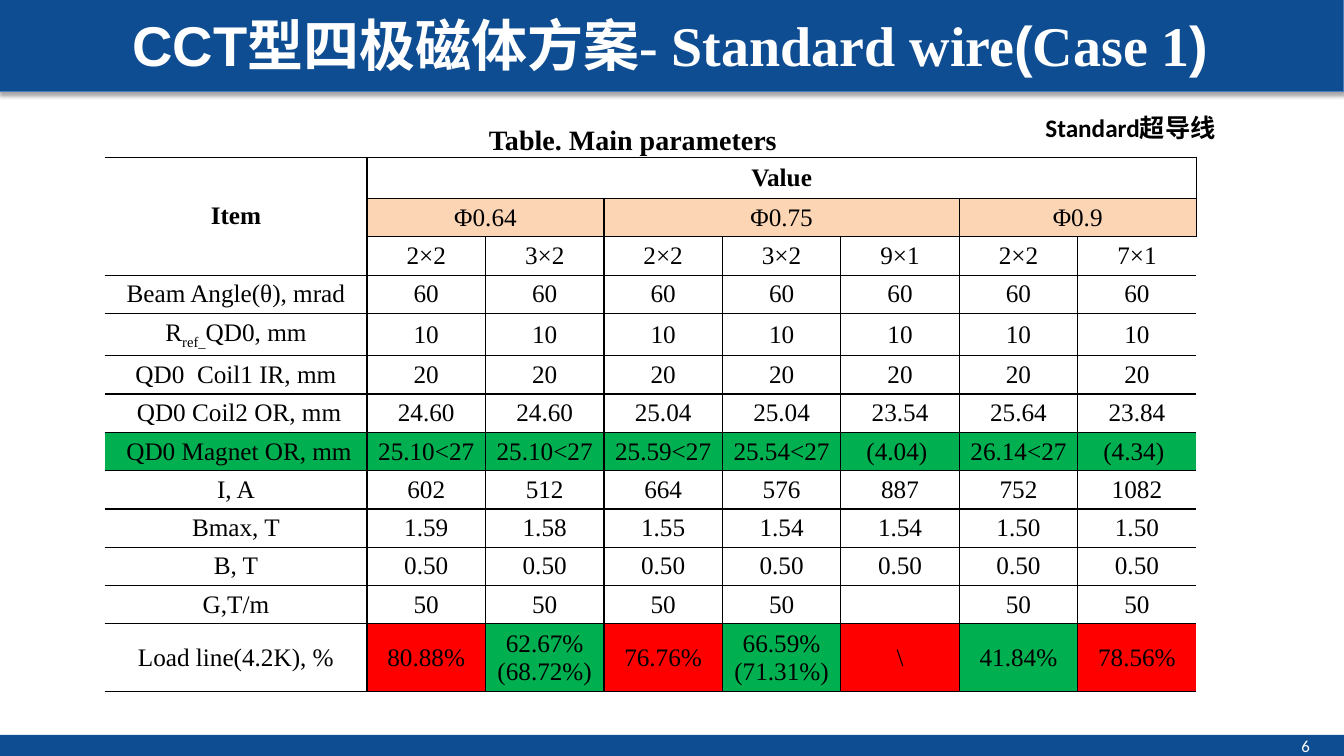
from dataclasses import dataclass

from lxml.etree import SubElement
from pptx import Presentation
from pptx.dml.color import RGBColor
from pptx.enum.shapes import MSO_SHAPE
from pptx.enum.text import MSO_ANCHOR, PP_ALIGN
from pptx.oxml.ns import qn
from pptx.util import Inches, Pt

COLORS = {
    "navy": "0E4D92",
    "edge": "4B7EBC",
    "white": "FFFFFF",
    "black": "000000",
    "peach": "FCD5B5",
    "green": "00B050",
    "red": "FF0000",
}
SERIF = "Times New Roman"
HEADER_ROWS = 3
MAGNET_ROW = 7
LOAD_COLORS = ["red", "green", "red", "green", "red", "green", "red"]
COLUMN_WIDTHS = [2.6] + [1.175] * 7
ROW_HEIGHTS = [0.41, 0.38, 0.38, 0.38, 0.42] + [0.38] * 7 + [0.67]
MERGES = [
    (0, 0, 2, 0), (0, 1, 0, 7),
    (1, 1, 1, 2), (1, 3, 1, 5), (1, 6, 1, 7),
]
PARAMETERS = [
    ["Item", "Value", "", "", "", "", "", ""],
    ["", "Φ0.64", "", "Φ0.75", "", "", "Φ0.9", ""],
    ["", "2×2", "3×2", "2×2", "3×2", "9×1", "2×2", "7×1"],
    ["Beam Angle(θ), mrad"] + ["60"] * 7,
    ["R|ref_|QD0, mm"] + ["10"] * 7,
    ["QD0  Coil1 IR, mm"] + ["20"] * 7,
    [" QD0 Coil2 OR, mm", "24.60", "24.60", "25.04", "25.04", "23.54", "25.64", "23.84"],
    [" QD0 Magnet OR, mm", "25.10<27", "25.10<27", "25.59<27", "25.54<27", "(4.04) ",
     "26.14<27", "(4.34) "],
    ["I, A", "602", "512", "664", "576", "887", "752", "1082"],
    ["Bmax, T", "1.59", "1.58", "1.55", "1.54", "1.54", "1.50", "1.50"],
    ["B, T"] + ["0.50"] * 7,
    ["G,T/m", "50", "50", "50", "50", "", "50", "50"],
    ["Load line(4.2K), %", "80.88%", "62.67%\n(68.72%)", "76.76%", "66.59%\n(71.31%)",
     "\\", "41.84%", "78.56%"],
]


@dataclass
class Label:
    spans: list[tuple[str, str]]
    left: float
    top: float
    width: float
    height: float
    size: int
    color: str = "black"
    bold: bool = True
    align: PP_ALIGN = PP_ALIGN.LEFT
    anchor: MSO_ANCHOR = MSO_ANCHOR.TOP
    spacing: float = 1.0
    inset: float = 0.05


@dataclass
class Band:
    top: float
    height: float
    raised: bool


BANDS = [Band(7.29, 0.21, False), Band(-0.01, 0.92, True)]
LABELS = [
    Label([("CCT型四极磁体方案", "Arial"), ("- Standard wire", SERIF), ("(", "Arial"),
           ("Case 1", SERIF), (")", "Arial")],
          0.9, 0, 11.5, 0.88, 40, "white", align=PP_ALIGN.CENTER, anchor=MSO_ANCHOR.MIDDLE),
    Label([("Table. Main parameters", SERIF)], 4.75, 1.07, 3.39, 0.49, 20, spacing=1.3),
    Label([("Standard超导线", "Calibri")], 10.27, 1.07, 2.12, 0.4, 18),
    Label([("6", "Calibri")], 10.76, 7.29, 2.33, 0.22, 12, "white", False,
          PP_ALIGN.RIGHT, inset=0.01),
]


def color_of(name: str) -> RGBColor:
    return RGBColor.from_string(COLORS[name])


def draw_band(page, band: Band) -> None:
    shape = page.shapes.add_shape(
        MSO_SHAPE.RECTANGLE, 0, Inches(band.top), Inches(13.33), Inches(band.height))
    shape.fill.solid()
    shape.fill.fore_color.rgb = color_of("navy")
    shape.shadow.inherit = False
    if not band.raised:
        shape.line.fill.background()
        return
    shape.line.color.rgb = color_of("edge")
    shape.line.width = Pt(0.75)
    effects = shape.element.spPr.find(qn("a:effectLst"))
    shadow = SubElement(effects, qn("a:outerShdw"), blurRad=str(Pt(3.1)),
                        dist=str(Pt(1.8)), dir="5400000", rotWithShape="0")
    tint = SubElement(shadow, qn("a:srgbClr"), val=COLORS["black"])
    SubElement(tint, qn("a:alpha"), val="35000")


def draw_label(page, label: Label) -> None:
    box = page.shapes.add_textbox(Inches(label.left), Inches(label.top),
                                  Inches(label.width), Inches(label.height))
    frame = box.text_frame
    frame.word_wrap = True
    frame.vertical_anchor = label.anchor
    frame.margin_top = frame.margin_bottom = Inches(label.inset)
    para = frame.paragraphs[0]
    para.alignment = label.align
    para.line_spacing = label.spacing
    para.font.size = Pt(label.size)
    para.font.bold = label.bold
    para.font.color.rgb = color_of(label.color)
    if len(label.spans) == 1:
        para.font.name = label.spans[0][1]
    for text, font in label.spans:
        span = para.add_run()
        span.text = text
        if len(label.spans) > 1:
            span.font.name = font


def cell_color(row: int, column: int) -> str | None:
    if row == 1 and column > 0:
        return "peach"
    if row == MAGNET_ROW:
        return "green"
    if row == len(PARAMETERS) - 1 and column > 0:
        return LOAD_COLORS[column - 1]
    return None


def set_borders(cell, column: int) -> None:
    properties = cell._tc.get_or_add_tcPr()
    open_sides = {0: "lnL", len(COLUMN_WIDTHS) - 1: "lnR"}
    for position, side in enumerate(["lnL", "lnR", "lnT", "lnB"]):
        line = properties.makeelement(qn(f"a:{side}"), {"w": str(Pt(1))})
        properties.insert(position, line)
        if open_sides.get(column) == side:
            SubElement(line, qn("a:noFill"))
        else:
            SubElement(SubElement(line, qn("a:solidFill")), qn("a:srgbClr"),
                       val=COLORS["black"])


def write_cell(cell, text: str, bold: bool) -> None:
    cell.vertical_anchor = MSO_ANCHOR.MIDDLE
    cell.margin_left = cell.margin_right = Inches(0.07)
    cell.margin_top = cell.margin_bottom = Inches(0.04)
    frame = cell.text_frame
    for index, line in enumerate(text.split("\n")):
        para = frame.add_paragraph() if index else frame.paragraphs[0]
        para.alignment = PP_ALIGN.CENTER
        para.font.name = SERIF
        para.font.size = Pt(18)
        para.font.bold = bold
        para.font.color.rgb = color_of("black")
        for order, piece in enumerate(line.split("|")):
            if piece:
                span = para.add_run()
                span.text = piece
                if order == 1:
                    span._r.get_or_add_rPr().set("baseline", "-25000")


def draw_table(page) -> None:
    table = page.shapes.add_table(
        len(ROW_HEIGHTS), len(COLUMN_WIDTHS), Inches(1.04), Inches(1.56),
        Inches(sum(COLUMN_WIDTHS)), Inches(sum(ROW_HEIGHTS))).table
    table.first_row = table.horz_banding = False
    for column, width in zip(table.columns, COLUMN_WIDTHS):
        column.width = Inches(width)
    for row, height in zip(table.rows, ROW_HEIGHTS):
        row.height = Inches(height)
    for top, left, bottom, right in MERGES:
        table.cell(top, left).merge(table.cell(bottom, right))
    for row, values in enumerate(PARAMETERS):
        for column, text in enumerate(values):
            cell = table.cell(row, column)
            write_cell(cell, text, row == 0)
            color = cell_color(row, column)
            if color:
                cell.fill.solid()
                cell.fill.fore_color.rgb = color_of(color)
            else:
                cell.fill.background()
            set_borders(cell, column)


def main() -> None:
    deck = Presentation()
    deck.slide_width, deck.slide_height = Inches(13.33), Inches(7.5)
    page = deck.slides.add_slide(deck.slide_layouts[6])
    for band in BANDS:
        draw_band(page, band)
    draw_table(page)
    for label in LABELS:
        draw_label(page, label)
    deck.save("out.pptx")


if __name__ == "__main__":
    main()
